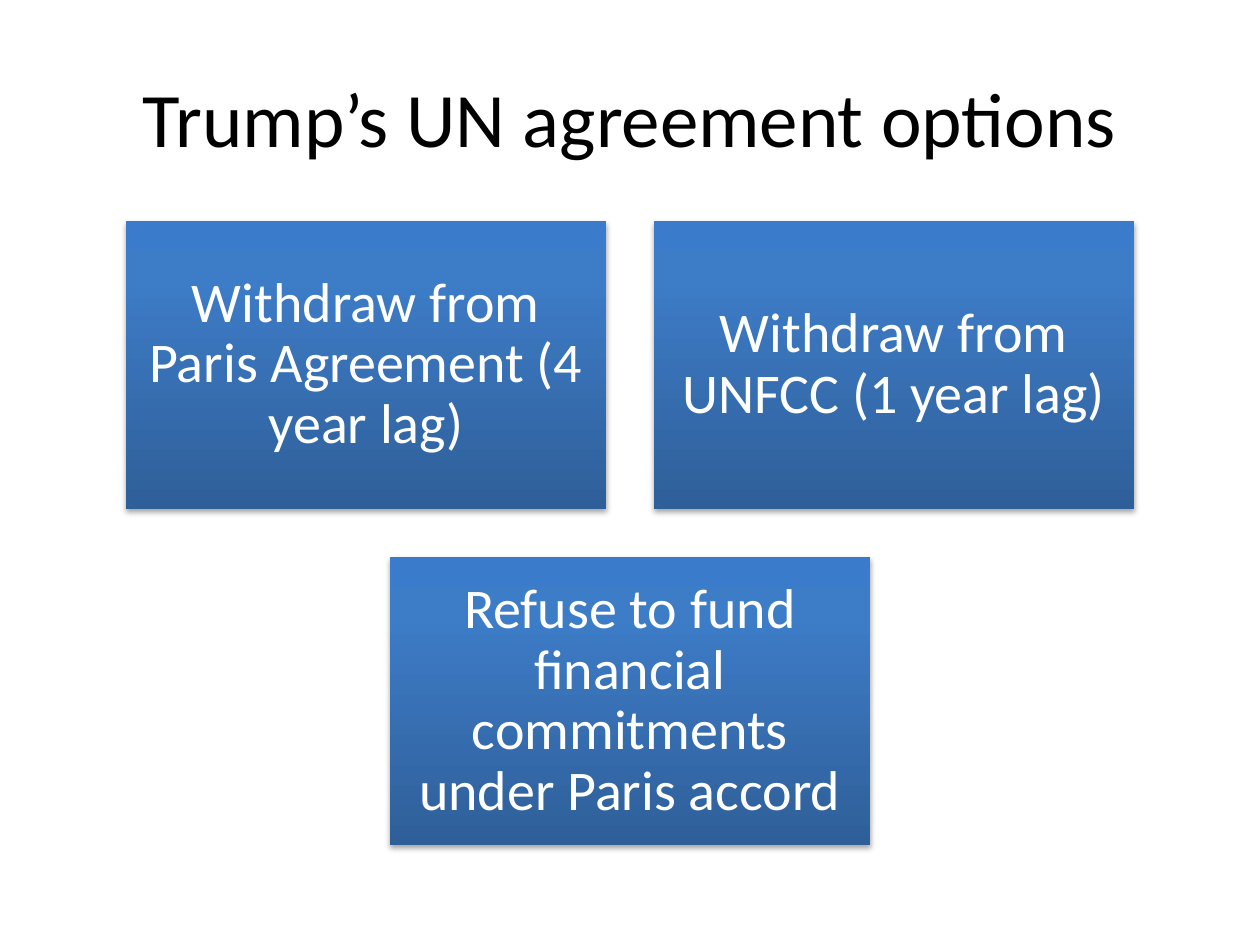
from dataclasses import dataclass
from copy import deepcopy

from lxml.etree import SubElement
from pptx import Presentation
from pptx.dml.color import RGBColor
from pptx.enum.shapes import MSO_SHAPE
from pptx.enum.text import MSO_ANCHOR, PP_ALIGN
from pptx.oxml.ns import qn
from pptx.shapes.autoshape import Shape
from pptx.slide import Slide
from pptx.text.text import TextFrame
from pptx.util import Inches, Pt

SLIDE_WIDTH = 10
CARD_WIDTH, CARD_HEIGHT, GAP = 3.81, 2.29, 0.38
FIRST_ROW_TOP = 1.75
GRADIENT = [(0, "2F5F99"), (0.8, "3D7CC7"), (1, "3A7CCB")]


@dataclass
class Option:
    text: str
    left: float
    top: float


def color(value: str) -> RGBColor:
    return RGBColor.from_string(value)


def write(frame: TextFrame, text: str, size: int, text_color: str) -> None:
    """Put one centred paragraph into a frame."""
    frame.text = text
    frame.word_wrap = True
    frame.vertical_anchor = MSO_ANCHOR.MIDDLE
    para = frame.paragraphs[0]
    para.alignment = PP_ALIGN.CENTER
    span = para.runs[0]
    span.font.name = "Calibri"
    span.font.size = Pt(size)
    span.font.color.rgb = color(text_color)


def fill_gradient(box: Shape) -> None:
    box.fill.gradient()
    box.fill.gradient_angle = 90
    # A new gradient has two stops; add the third
    stop_list = box.element.spPr.find(qn("a:gradFill")).find(qn("a:gsLst"))
    stop_list.append(deepcopy(stop_list[-1]))
    for stop, (position, value) in zip(box.fill.gradient_stops, GRADIENT):
        stop.position = position
        stop.color.rgb = color(value)


def add_shadow(box: Shape) -> None:
    box.shadow.inherit = False
    effects = box.element.spPr.find(qn("a:effectLst"))
    shadow = SubElement(effects, qn("a:outerShdw"), blurRad=str(Pt(3.1)),
                        dist=str(Pt(1.8)), dir="5400000", rotWithShape="0")
    shade = SubElement(shadow, qn("a:srgbClr"), val="000000")
    SubElement(shade, qn("a:alpha"), val="35000")


def draw_option(page: Slide, option: Option) -> None:
    box = page.shapes.add_shape(
        MSO_SHAPE.RECTANGLE, Inches(option.left), Inches(option.top),
        Inches(CARD_WIDTH), Inches(CARD_HEIGHT))
    fill_gradient(box)
    box.line.fill.background()
    add_shadow(box)
    frame = box.text_frame
    write(frame, option.text, 32, "FFFFFF")
    frame.paragraphs[0].line_spacing = 0.9
    frame.margin_left = frame.margin_right = Inches(0.13)
    frame.margin_top = frame.margin_bottom = Inches(0.13)


def arrange(rows: list[list[str]]) -> list[Option]:
    """Centre each row of cards across the slide."""
    options = []
    for row, texts in enumerate(rows):
        row_width = len(texts) * (CARD_WIDTH + GAP) - GAP
        start = (SLIDE_WIDTH - row_width) / 2
        top = FIRST_ROW_TOP + row * (CARD_HEIGHT + GAP)
        options += [Option(text, start + column * (CARD_WIDTH + GAP), top)
                    for column, text in enumerate(texts)]
    return options


def main() -> None:
    deck = Presentation()
    deck.slide_width, deck.slide_height = Inches(SLIDE_WIDTH), Inches(7.5)
    page = deck.slides.add_slide(deck.slide_layouts[5])

    # Title
    title = page.shapes.title
    title.left, title.top = Inches(0.5), Inches(0.3)
    title.width, title.height = Inches(9), Inches(1.25)
    write(title.text_frame, "Trump’s UN agreement options", 44, "000000")

    # Option cards
    rows = [
        ["Withdraw from Paris Agreement (4 year lag)",
         "Withdraw from UNFCC (1 year lag)"],
        ["Refuse to fund financial commitments under Paris accord"],
    ]
    for option in arrange(rows):
        draw_option(page, option)

    deck.save("out.pptx")


if __name__ == "__main__":
    main()
